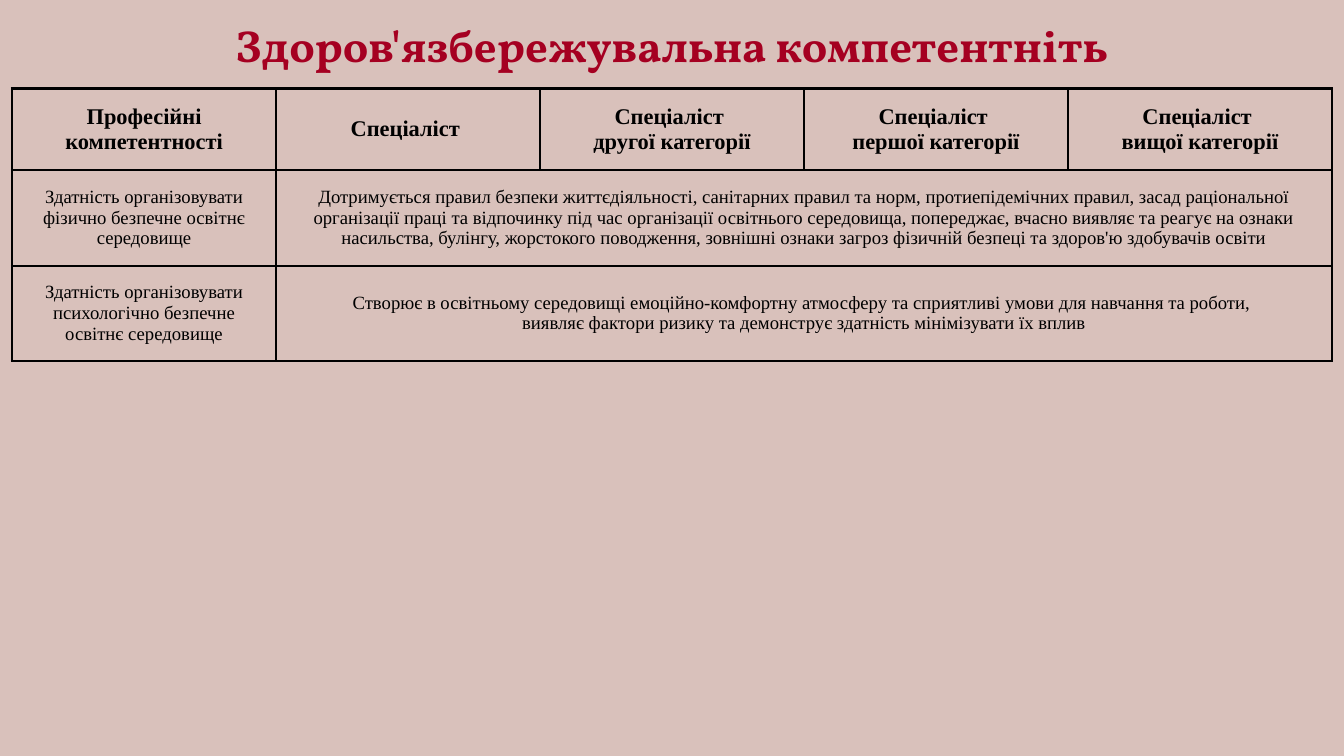
from dataclasses import dataclass

import pptx
import pptx.dml.color
import pptx.enum.text
import pptx.oxml
import pptx.oxml.ns
import pptx.util


@dataclass(frozen=True)
class Theme:
    """Colours, fonts and sizes of the slide."""
    background: str = "D9C1BB"
    accent: str = "A50021"
    ink: str = "000000"
    title_font: str = "Vollkorn"
    table_font: str = "Times New Roman"
    title_size: int = 48
    header_size: int = 24
    body_size: int = 20
    border: int = 3
    cell_margin: float = 0.84


class SlideBuilder:
    """Places styled elements on a grid of 80 columns by 45 rows."""

    def __init__(self, presentation, theme):
        self.theme = theme
        self.column = presentation.slide_width / 80
        self.row = presentation.slide_height / 45
        self.slide = presentation.slides.add_slide(presentation.slide_layouts[6])
        fill = self.slide.background.fill
        fill.solid()
        fill.fore_color.rgb = pptx.dml.color.RGBColor.from_string(theme.background)

    def box(self, left, top, width, height):
        return [pptx.util.Emu(round(length * unit)) for length, unit in
                zip((left, top, width, height), (self.column, self.row) * 2)]

    def set_text(self, frame, text, color, spacing=None, **font_format):
        frame.word_wrap = True
        frame.text = text
        for paragraph in frame.paragraphs:
            paragraph.alignment = pptx.enum.text.PP_ALIGN.CENTER
            paragraph.line_spacing = spacing
            for run in paragraph.runs:
                for name, value in font_format.items():
                    setattr(run.font, name, value)
                run.font.color.rgb = pptx.dml.color.RGBColor.from_string(color)

    def title(self, text, *place):
        frame = self.slide.shapes.add_textbox(*self.box(*place)).text_frame
        for side in ("left", "right", "top", "bottom"):
            setattr(frame, f"margin_{side}", 0)
        self.set_text(frame, text, self.theme.accent, 1.1, name=self.theme.title_font,
                      size=pptx.util.Pt(self.theme.title_size), bold=True)

    def table(self, rows, row_heights, left, top, width):
        column_count = len(rows[0])
        shape = self.slide.shapes.add_table(
            len(rows), column_count, *self.box(left, top, width, sum(row_heights)))
        table = shape.table
        table.first_row = table.horz_banding = False
        for row, height in zip(table.rows, row_heights):
            row.height = round(height * self.row)
        for row_index, texts in enumerate(rows):
            for column_index in range(column_count):
                self.style_cell(table.cell(row_index, column_index))
            for column_index, text in enumerate(texts):
                size = self.theme.body_size if row_index else self.theme.header_size
                self.set_text(table.cell(row_index, column_index).text_frame, text,
                              self.theme.ink, name=self.theme.table_font,
                              size=pptx.util.Pt(size), bold=row_index == 0)
            if len(texts) < column_count:
                table.cell(row_index, len(texts) - 1).merge(
                    table.cell(row_index, column_count - 1))

    def style_cell(self, cell):
        margin = round(self.theme.cell_margin * self.column)
        cell_format = {f"margin_{side}": margin for side in ("left", "right", "top", "bottom")}
        cell_format["vertical_anchor"] = pptx.enum.text.MSO_ANCHOR.MIDDLE
        for name, value in cell_format.items():
            setattr(cell, name, value)
        properties = cell._tc.get_or_add_tcPr()
        for side in "LRTB":
            properties.append(pptx.oxml.parse_xml(
                f'<a:ln{side} {pptx.oxml.ns.nsdecls("a")} w="{pptx.util.Pt(self.theme.border)}">'
                f'<a:solidFill><a:srgbClr val="{self.theme.ink}"/></a:solidFill></a:ln{side}>'))
        cell.fill.background()


def main():
    presentation = pptx.Presentation()
    presentation.slide_width = pptx.util.Inches(20)
    presentation.slide_height = pptx.util.Inches(11.25)
    builder = SlideBuilder(presentation, Theme())
    specialist = "Спеціаліст "
    categories = [f"{specialist}\n{level} категорії" for level in ("другої", "першої", "вищої")]
    rows = [
        ["Професійні компетентності", specialist, *categories],
        ["Здатність організовувати фізично безпечне освітнє середовище",
         "Дотримується правил безпеки життєдіяльності, санітарних правил та норм, "
         "протиепідемічних правил, засад раціональної організації праці та відпочинку "
         "під час організації освітнього середовища, попереджає, вчасно виявляє та реагує "
         "на ознаки насильства, булінгу, жорстокого поводження, зовнішні ознаки загроз "
         "фізичній безпеці та здоров'ю здобувачів освіти"],
        ["Здатність організовувати психологічно безпечне освітнє середовище",
         "Створює в освітньому середовищі емоційно-комфортну атмосферу та сприятливі умови "
         "для навчання та роботи, \n"
         "виявляє фактори ризику та демонструє здатність мінімізувати їх вплив"],
    ]
    builder.table(rows, (4.84, 5.7, 5.66), 0.72, 5.28, 78.56)
    builder.title("Здоров'язбережувальна компетентніть", 4.5, 0.72, 71, 3.56)
    presentation.save("out.pptx")


if __name__ == "__main__":
    main()
